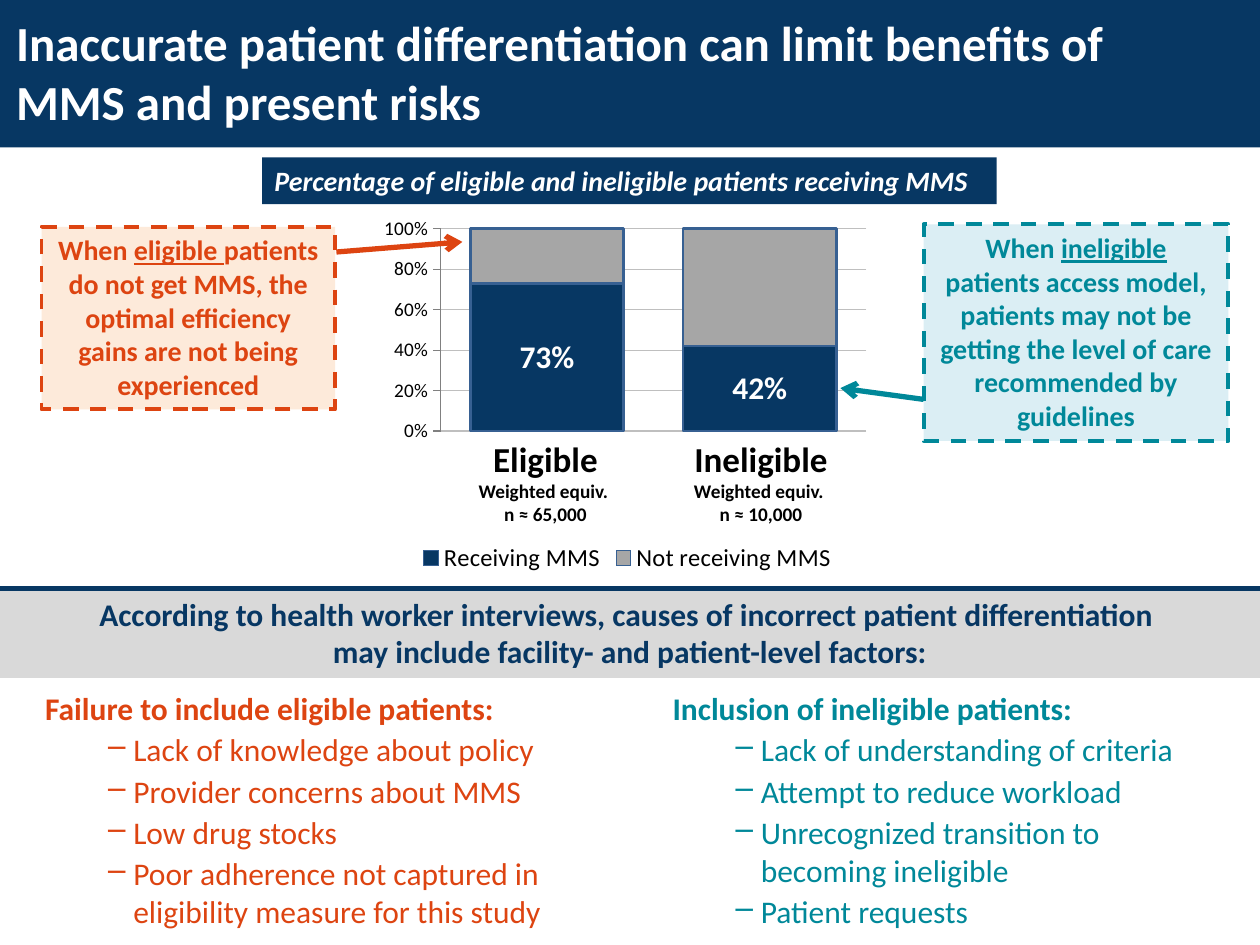
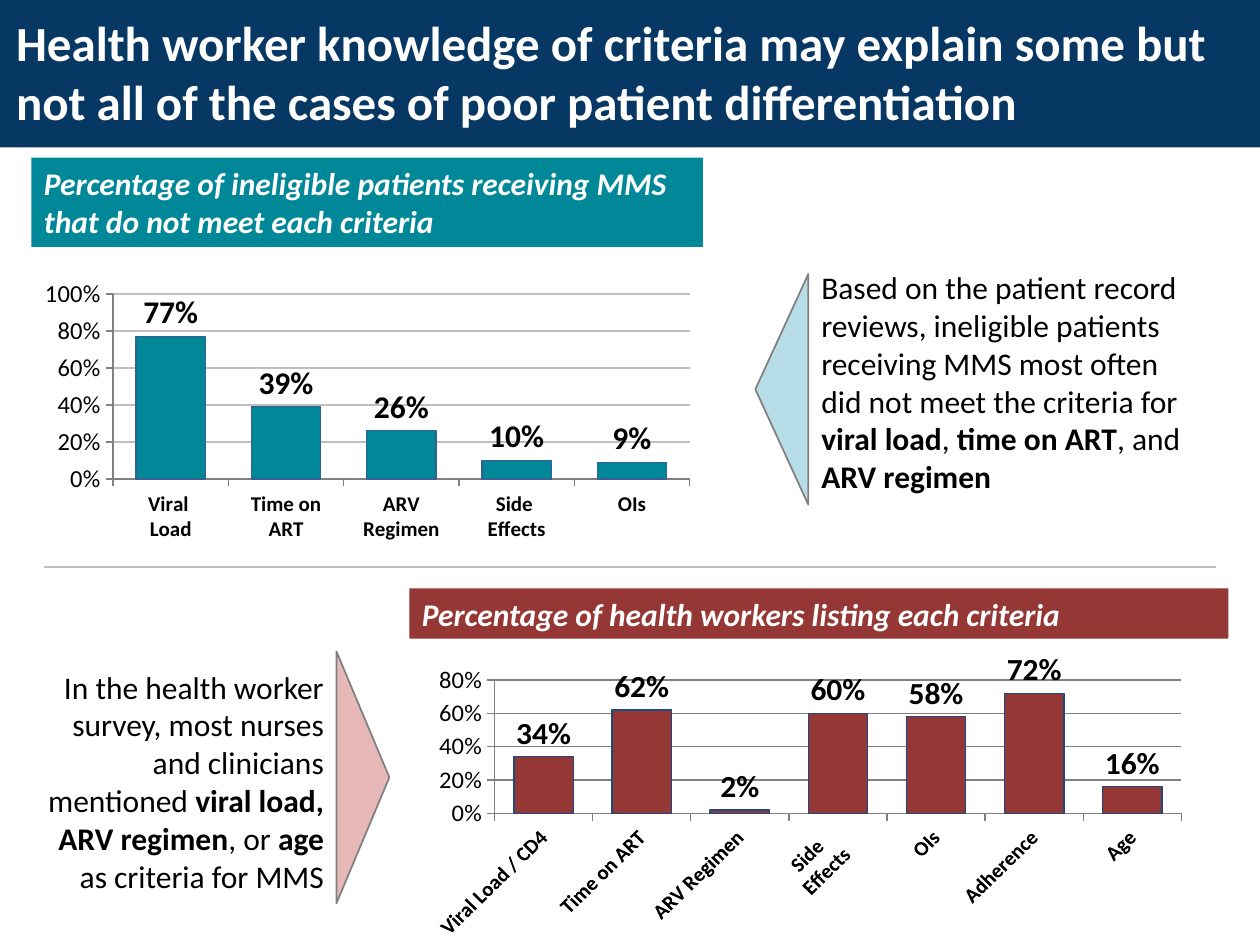
"""Build two slides on patient differentiation and MMS."""
from dataclasses import dataclass
from typing import Optional

import lxml.etree
import pptx
import pptx.chart.data
import pptx.dml.color
import pptx.enum.chart
import pptx.enum.dml
import pptx.enum.shapes
import pptx.enum.text
import pptx.oxml.ns
import pptx.util

Inches = pptx.util.Inches
Pt = pptx.util.Pt
qn = pptx.oxml.ns.qn
SHAPE = pptx.enum.shapes.MSO_SHAPE
ALIGN = pptx.enum.text.PP_ALIGN
ANCHOR = pptx.enum.text.MSO_ANCHOR
CHART = pptx.enum.chart.XL_CHART_TYPE

FONT = "Calibri"
NAVY, ORANGE, TEAL, RED = "073763", "DD4411", "008899", "953735"
WHITE, BLACK, GREY, SILVER, BLUE = "FFFFFF", "000000", "808080", "BFBFBF", "376092"
Box = tuple[float, float, float, float]
Point = tuple[float, float]


@dataclass
class Style:
    """Look of a text; segments between bars are emphasised."""
    size: float
    color: str = BLACK
    bold: bool = False
    italic: bool = False
    emphasis: str = "bold"
    align: ALIGN = ALIGN.LEFT


@dataclass
class Callout:
    """Dashed box with an arrow into the chart."""
    box: Box
    fill: str
    color: str
    text: str
    start: Point
    end: Point


@dataclass
class Causes:
    """Coloured heading with dashed items."""
    box: Box
    color: str
    heading: str
    items: list[str]


@dataclass
class Series:
    """One set of columns."""
    name: str
    values: list[float]
    color: str
    label_color: Optional[str] = None


@dataclass
class Columns:
    """A column chart; plot is the inner plot area as fractions of the frame."""
    box: Box
    kind: CHART
    categories: list[str]
    series: list[Series]
    gap: int
    plot: Optional[Box] = None
    line: str = BLUE
    line_width: float = 0.75
    axis_size: float = 14
    top: Optional[float] = None
    step: Optional[float] = None
    grid: str = SILVER
    slanted: bool = False


def rgb(color: str):
    """Turn a hex string into a colour."""
    return pptx.dml.color.RGBColor.from_string(color)


def set_line(line, color: str, width: float) -> None:
    """Colour and size a line."""
    line.color.rgb = rgb(color)
    line.width = Pt(width)


def set_font(font, size: float, color: str = BLACK, bold: bool = False) -> None:
    """Apply the deck font."""
    font.name, font.size, font.bold = FONT, Pt(size), bold
    font.color.rgb = rgb(color)


def write(p, text: str, style: Style) -> None:
    """Fill a paragraph, emphasising every second segment."""
    p.alignment = style.align
    for i, segment in enumerate(text.split("|")):
        r = p.add_run()
        r.text = segment
        set_font(r.font, style.size, style.color, style.bold)
        r.font.italic = style.italic
        if i % 2:
            setattr(r.font, style.emphasis, True)


def fill_text(sp, lines: list[tuple[str, Style]], anchor=ANCHOR.TOP) -> None:
    """Write one paragraph per line into a shape."""
    tf = sp.text_frame
    tf.word_wrap = True
    tf.vertical_anchor = anchor
    for i, (text, style) in enumerate(lines):
        write(tf.add_paragraph() if i else tf.paragraphs[0], text, style)


def add_text(s, box: Box, lines: list[tuple[str, Style]], anchor=ANCHOR.TOP):
    """Add a text box."""
    sp = s.shapes.add_textbox(*map(Inches, box))
    fill_text(sp, lines, anchor)
    return sp


def add_block(s, box: Box, fill: str, lines=(), kind=SHAPE.RECTANGLE):
    """Add a flat filled shape without outline."""
    sp = s.shapes.add_shape(kind, *map(Inches, box))
    sp.shadow.inherit = False
    sp.fill.solid()
    sp.fill.fore_color.rgb = rgb(fill)
    sp.line.fill.background()
    fill_text(sp, lines)
    return sp


def add_line(s, start: Point, end: Point, color: str, width: float, arrow: bool = False) -> None:
    """Add a straight line, with an arrowhead at its end if asked."""
    sp = s.shapes.add_connector(pptx.enum.shapes.MSO_CONNECTOR.STRAIGHT, *map(Inches, start + end))
    set_line(sp.line, color, width)
    props = sp.element.spPr
    if arrow:
        lxml.etree.SubElement(props.find(qn("a:ln")), qn("a:tailEnd"), type="arrow")
    lxml.etree.SubElement(props, qn("a:effectLst"))


def add_triangle(s, box: Box, fill: str, rotation: float) -> None:
    """Add a turned pointer triangle."""
    sp = add_block(s, box, fill, kind=SHAPE.ISOSCELES_TRIANGLE)
    set_line(sp.line, GREY, 1)
    sp.rotation = rotation


def add_callout(s, c: Callout) -> None:
    """Add a callout and its arrow."""
    style = Style(16, c.color, bold=True, emphasis="underline", align=ALIGN.CENTER)
    sp = add_block(s, c.box, c.fill, [(c.text, style)])
    set_line(sp.line, c.color, 2.25)
    sp.line.dash_style = pptx.enum.dml.MSO_LINE.DASH
    add_line(s, c.start, c.end, c.color, 3, arrow=True)


def add_causes(s, c: Causes) -> None:
    """Add a heading and its dashed list."""
    lines = [(c.heading, Style(18, c.color, bold=True))]
    lines += [(item, Style(18, c.color)) for item in c.items]
    sp = add_text(s, c.box, lines)
    for p in sp.text_frame.paragraphs[1:]:
        p.level = 1
        p.space_before = Pt(2)
        props = p._p.get_or_add_pPr()
        props.set("marL", str(Inches(0.7)))
        props.set("indent", str(Inches(-0.2)))
        lxml.etree.SubElement(props, qn("a:buChar"), char="–")


def place_plot(chart, plot: Box) -> None:
    """Fix the inner plot area."""
    area = chart.element.xpath(".//c:plotArea")[0]
    for old in area.findall(qn("c:layout")):
        area.remove(old)
    layout = lxml.etree.Element(qn("c:layout"))
    manual = lxml.etree.SubElement(layout, qn("c:manualLayout"))
    settings = [("layoutTarget", "inner"), ("xMode", "edge"), ("yMode", "edge")]
    settings += zip("xywh", map(str, plot))
    for tag, value in settings:
        lxml.etree.SubElement(manual, qn("c:" + tag), val=value)
    area.insert(0, layout)


def add_columns(s, c: Columns):
    """Add a column chart."""
    data = pptx.chart.data.CategoryChartData(number_format="0%")
    data.categories = c.categories
    for column in c.series:
        data.add_series(column.name, column.values)
    chart = s.shapes.add_chart(c.kind, *map(Inches, c.box), data).chart
    set_font(chart.font, 10)
    chart.has_title = chart.has_legend = False
    if c.plot:
        place_plot(chart, c.plot)
    plot = chart.plots[0]
    plot.vary_by_categories = False
    plot.gap_width = c.gap
    stacked = c.kind == CHART.COLUMN_STACKED_100
    position = pptx.enum.chart.XL_LABEL_POSITION
    for series, column in zip(plot.series, c.series):
        series.format.fill.solid()
        series.format.fill.fore_color.rgb = rgb(column.color)
        set_line(series.format.line, c.line, c.line_width)
        if column.label_color:
            labels = series.data_labels
            labels.show_value = True
            labels.number_format, labels.number_format_is_linked = "0%", False
            labels.position = position.CENTER if stacked else position.OUTSIDE_END
            set_font(labels.font, 18, column.label_color, bold=True)
    values, names = chart.value_axis, chart.category_axis
    values.maximum_scale, values.major_unit = c.top, c.step
    values.has_major_gridlines = True
    set_line(values.major_gridlines.format.line, c.grid, 0.75)
    values.tick_labels.number_format = "0%"
    values.tick_labels.number_format_is_linked = False
    set_font(values.tick_labels.font, c.axis_size)
    set_font(names.tick_labels.font, 12, bold=True)
    for axis in (values, names):
        axis.major_tick_mark = pptx.enum.chart.XL_TICK_MARK.OUTSIDE
        set_line(axis.format.line, GREY, 0.75)
    if c.slanted:
        chart.element.xpath(".//c:catAx/c:txPr/a:bodyPr")[0].set("rot", "-2700000")
    return chart


def add_title(s, text: str, width: float) -> None:
    """Add the navy title band."""
    add_block(s, (0, 0, 10, 1.17), NAVY)
    add_text(s, (0.03, 0.07, width, 1), [(text, Style(28, WHITE, bold=True))], ANCHOR.MIDDLE)


def add_banner(s, box: Box, fill: str, text: str, size: float) -> None:
    """Add an italic chart heading."""
    add_block(s, box, fill, [(text, Style(size, WHITE, bold=True, italic=True))])


def build_risks(s) -> None:
    """Build the slide on risks and causes."""
    chart = add_columns(s, Columns(
        (2.92, 1.67, 4.12, 2.92), CHART.COLUMN_STACKED_100, ["1", "2"],
        [Series("Receiving MMS", [0.73, 0.42], NAVY, WHITE),
         Series("Not receiving MMS", [0.27, 0.58], "A6A6A6")],
        gap=39, plot=(0.14, 0.05, 0.82, 0.55), line_width=1.5, axis_size=11, step=0.2))
    chart.category_axis.visible = False
    chart.has_legend = True
    chart.legend.position = pptx.enum.chart.XL_LEGEND_POSITION.BOTTOM
    chart.legend.include_in_layout = False
    set_font(chart.legend.font, 14)
    add_title(s, "Inaccurate patient differentiation can limit benefits of MMS and present risks", 9.61)
    for callout in (
        Callout((0.33, 1.8, 2.33, 1.45), "FDEADA", ORANGE,
                "When |eligible |patients do not get MMS, the optimal efficiency gains are not being experienced",
                (2.67, 2), (3.67, 1.92)),
        Callout((7.33, 1.78, 2.42, 1.72), "DBEEF4", TEAL,
                "When |ineligible |patients access model, patients may not be getting the level of care "
                "recommended by guidelines", (7.33, 3.17), (6.67, 3.08)),
    ):
        add_callout(s, callout)
    for causes in (
        Causes((0.26, 5.42, 4.57, 2.03), ORANGE, "Failure to include eligible patients:",
               ["Lack of knowledge about policy", "Provider concerns about MMS", "Low drug stocks",
                "Poor adherence not captured in eligibility measure for this study"]),
        Causes((5.24, 5.42, 4.6, 2.03), TEAL, "Inclusion of ineligible patients:",
               ["Lack of understanding of criteria", "Attempt to reduce workload",
                "Unrecognized transition to becoming ineligible", "Patient requests"]),
    ):
        add_causes(s, causes)
    band = Style(18, NAVY, bold=True, align=ALIGN.CENTER)
    add_block(s, (0, 4.67, 10, 0.71), "D9D9D9", [
        ("According to health worker interviews, causes of incorrect patient differentiation ", band),
        ("may include facility- and patient-level factors:", band)])
    for width in (3, 0.75):
        add_line(s, (0, 4.67), (10, 4.67), NAVY, width)
    add_banner(s, (2.08, 1.25, 5.83, 0.37), NAVY,
               "Percentage of eligible and ineligible patients receiving MMS", 16)
    name, note = (Style(size, bold=True, align=ALIGN.CENTER) for size in (20, 11))
    for x, width, group, count in ((3.58, 1.5, "Eligible", "65,000"), (5.33, 1.42, "Ineligible", "10,000")):
        add_text(s, (x, 3.42, width, 0.81),
                 [(group, name), ("Weighted equiv. ", note), (f"n ≈ {count}", note)])


def build_knowledge(s) -> None:
    """Build the slide on health worker knowledge."""
    add_title(s, "Health worker knowledge of criteria may explain some but not all of the cases "
                 "of poor patient differentiation", 10.06)
    add_line(s, (0.35, 4.5), (9.65, 4.5), SILVER, 0.75)
    add_text(s, (0.17, 5.25, 2.5, 2), [(
        "In the health worker survey, most nurses and clinicians mentioned |viral load, ARV regimen|, or "
        "|age |as criteria for MMS", Style(18, align=ALIGN.RIGHT))])
    add_text(s, (6.42, 2.08, 3.23, 2.25), [(
        "Based on the patient record reviews, ineligible patients receiving MMS most often did not meet "
        "the criteria for |viral load|, |time on ART|, and |ARV regimen", Style(18))])
    add_triangle(s, (1.88, 5.96, 2, 0.42), "E6B9B8", 90)
    add_triangle(s, (5.29, 2.88, 1.83, 0.42), "B7DEE8", 270)
    add_banner(s, (0.25, 1.25, 5.33, 0.71), TEAL,
               "Percentage of ineligible patients receiving MMS that do not meet each criteria", 18)
    add_banner(s, (3.25, 4.67, 6.5, 0.4), RED, "Percentage of health workers listing each criteria", 18)
    shared = ["Time on ART", "ARV Regimen", "Side \nEffects", "OIs"]
    add_columns(s, Columns(
        (0.25, 2.17, 5.33, 2.17), CHART.COLUMN_CLUSTERED, ["Viral \nLoad", *shared],
        [Series("Series 1", [0.77, 0.39, 0.26, 0.1, 0.09], TEAL, BLACK)], gap=66, top=1, step=0.2))
    add_columns(s, Columns(
        (3.33, 5.17, 6.17, 2.33), CHART.COLUMN_CLUSTERED, ["Viral Load / CD4", *shared, "Adherence", "Age"],
        [Series("Series 1", [0.34, 0.62, 0.02, 0.6, 0.58, 0.72, 0.16], RED, BLACK)],
        gap=65, line="1F497D", grid=GREY, slanted=True))


def main() -> None:
    """Build and save the deck."""
    prs = pptx.Presentation()
    prs.slide_width, prs.slide_height = Inches(10), Inches(7.5)
    for build in (build_risks, build_knowledge):
        build(prs.slides.add_slide(prs.slide_layouts[6]))
    prs.save("out.pptx")


if __name__ == "__main__":
    main()
